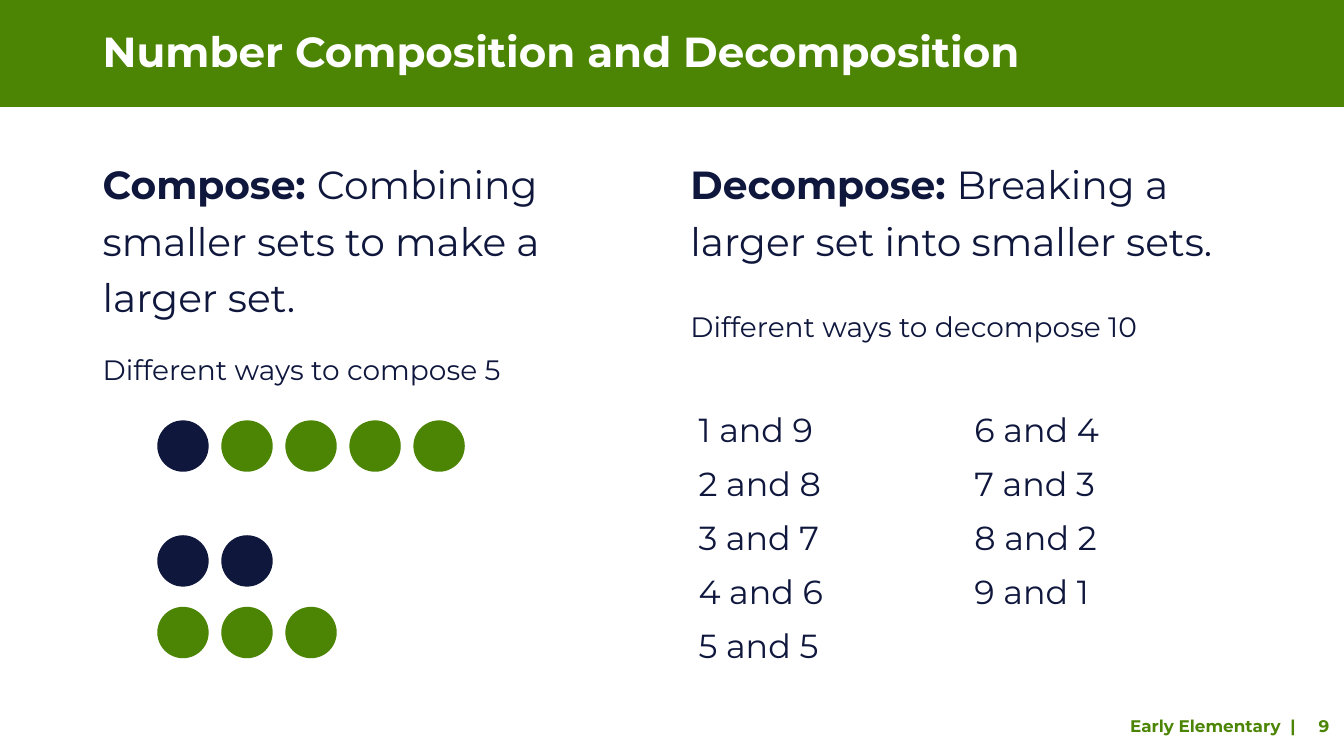
from lxml import etree
from pptx import Presentation
from pptx.dml.color import RGBColor
from pptx.enum.shapes import MSO_SHAPE
from pptx.enum.text import MSO_ANCHOR
from pptx.oxml.ns import qn
from pptx.util import Inches, Pt

RECTANGLE = MSO_SHAPE.RECTANGLE
OVAL = MSO_SHAPE.OVAL
TOP = MSO_ANCHOR.TOP
MIDDLE = MSO_ANCHOR.MIDDLE
GREEN = RGBColor(0x4C, 0x85, 0x03)
NAVY = RGBColor(0x0F, 0x17, 0x3D)
WHITE = RGBColor(0xFF, 0xFF, 0xFF)
FONT = "Montserrat"

TITLE = "Number Composition and Decomposition"
FOOTER = ("Early Elementary", "|", "9")
FOOTER_TABS = (1.59, 1.87)
DEFINITIONS = [
    {"area": (0.92, 1.45, 5.67, 3.78), "term": "Compose: ",
     "meaning": "Combining smaller sets to make a larger set.",
     "lead": "Different ways to compose 5", "before": 0},
    {"area": (6.75, 1.45, 5.67, 1.5), "term": "Decompose: ",
     "meaning": "Breaking a larger set into smaller sets.",
     "lead": "Different ways to decompose 10", "before": 10},
]
COUNTER_ROWS = [
    (4.17, [NAVY] + [GREEN] * 4),
    (5.31, [NAVY] * 2),
    (6.02, [GREEN] * 3),
]
COUNTER_LEFT, COUNTER_STEP, COUNTER_SIZE = 1.56, 0.635, 0.51
TOTAL = 10

deck = Presentation()
deck.slide_width = Inches(13.33)
deck.slide_height = Inches(7.5)
page = deck.slides.add_slide(deck.slide_layouts[6])


def add_shape(kind, area, color):
    shape = page.shapes.add_shape(kind, *map(Inches, area))
    shape.shadow.inherit = False
    shape.fill.solid()
    shape.fill.fore_color.rgb = color
    shape.line.fill.background()


def add_text(area, paragraphs, anchor=TOP):
    box = page.shapes.add_textbox(*map(Inches, area))
    frame = box.text_frame
    frame.word_wrap = True
    frame.vertical_anchor = anchor
    for index, (spans, spacing, before, after) in enumerate(paragraphs):
        para = frame.add_paragraph() if index else frame.paragraphs[0]
        para.line_spacing = spacing
        para.space_before = Pt(before if index else 0)
        para.space_after = Pt(after)
        for text, size, color, bold in spans:
            span = para.add_run()
            span.text = text
            span.font.name = FONT
            span.font.size = Pt(size)
            span.font.color.rgb = color
            span.font.bold = bold
    return frame


add_shape(RECTANGLE, (0, 0, 13.33, 1.06), GREEN)
add_text((0.92, 0.26, 11.82, 0.56),
         [([(TITLE, 30, WHITE, True)], 0.9, 0, 0)])

for definition in DEFINITIONS:
    before = definition["before"]
    add_text(definition["area"], [
        ([(definition["term"], 28, NAVY, True),
          (definition["meaning"], 28, NAVY, False)], 1.2, before, 18),
        ([(definition["lead"], 20, NAVY, False)], 1.2, before, 0),
    ])

for top, colors in COUNTER_ROWS:
    for index, color in enumerate(colors):
        left = COUNTER_LEFT + index * COUNTER_STEP
        add_shape(OVAL, (left, top, COUNTER_SIZE, COUNTER_SIZE), color)

pairs = [f"{part} and {TOTAL - part}" for part in range(1, TOTAL)]
pair_frame = add_text((6.83, 4.01, 5.67, 2.82), [
    ([(pair, 23.8, NAVY, False)], 1.0, 10, 0) for pair in pairs])
pair_frame._txBody.bodyPr.set("numCol", "2")

footer_frame = add_text((11.11, 7, 2.19, 0.4), [
    ([("\t".join(FOOTER), 12, GREEN, True)], 1.0, 0, 0)], MIDDLE)
properties = footer_frame.paragraphs[0]._p.get_or_add_pPr()
tabs = etree.SubElement(properties, qn("a:tabLst"))
for position in FOOTER_TABS:
    etree.SubElement(tabs, qn("a:tab"), pos=str(Inches(position)), algn="l")

deck.save("out.pptx")
